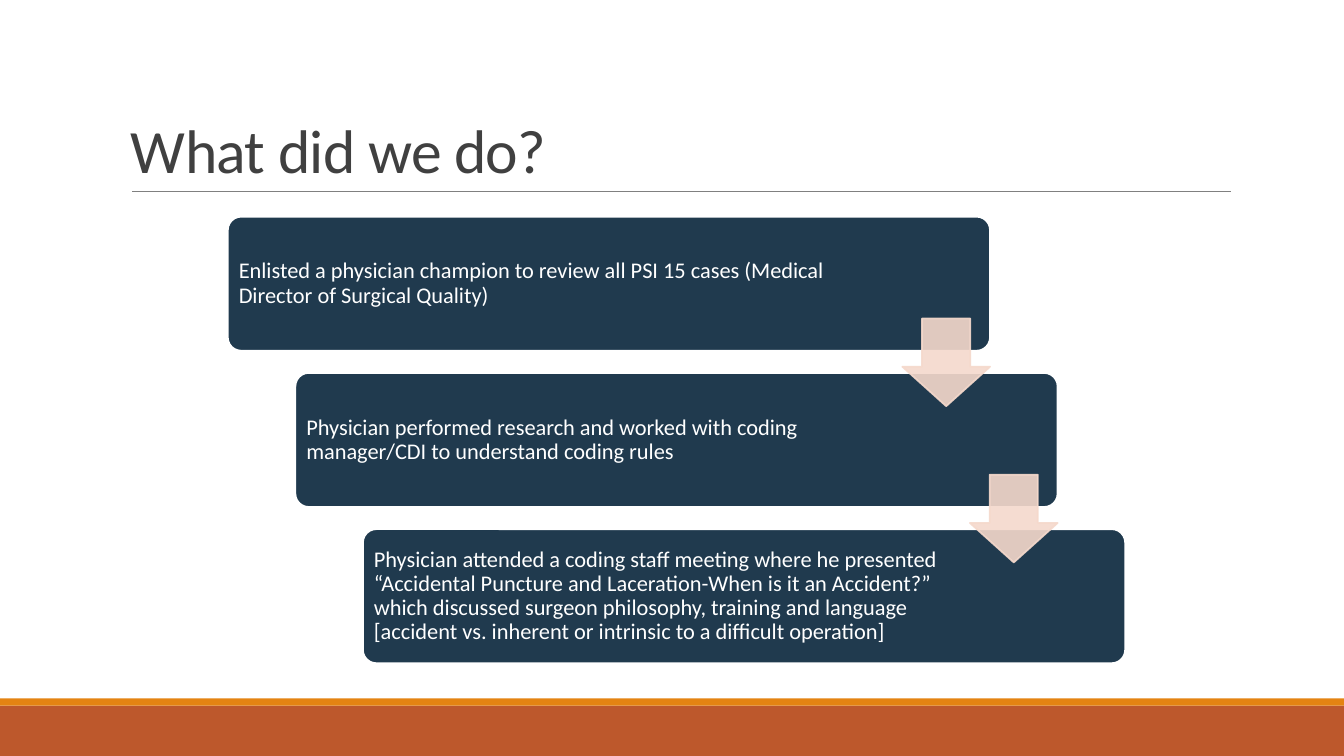
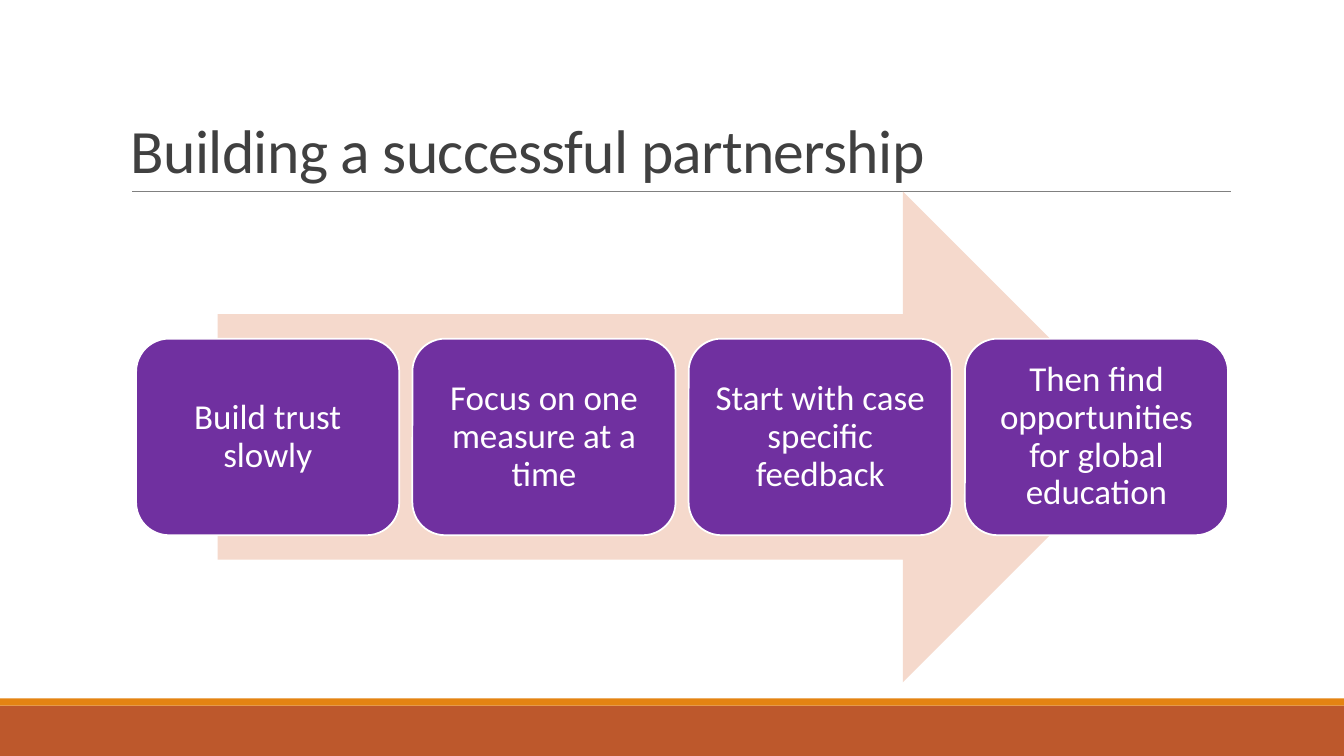
from typing import NamedTuple

from lxml import etree
from pptx import Presentation
from pptx.dml.color import RGBColor
from pptx.enum import shapes, text
from pptx.oxml import ns
from pptx.util import Inches, Pt

COLORS = {
    "footer": "BD582C",
    "stripe": "E48312",
    "rule": "808080",
    "title": "404040",
    "step": "203A4E",
    "stage": "7030A0",
    "arrow": "F5D9CC",
    "white": "FFFFFF",
}
FONT = "Calibri"
SHAPE = shapes.MSO_SHAPE


class Box(NamedTuple):
    left: float
    top: float
    width: float
    height: float

    def lengths(self):
        return [Inches(value) for value in self]


class TextStyle(NamedTuple):
    size: int
    color: str
    line_spacing: float
    align: text.PP_ALIGN = text.PP_ALIGN.LEFT
    anchor: text.MSO_ANCHOR = text.MSO_ANCHOR.MIDDLE


class Step(NamedTuple):
    words: str
    right_margin: float


TITLE_STYLE = TextStyle(44, "title", 0.85, anchor=text.MSO_ANCHOR.BOTTOM)
STEP_STYLE = TextStyle(16, "white", 0.9)
STAGE_STYLE = TextStyle(25, "white", 0.9, align=text.PP_ALIGN.CENTER)

STEPS = [
    Step("Enlisted a physician champion to review all PSI 15 cases "
         "(Medical Director of Surgical Quality)", 1.44),
    Step("Physician performed research and worked with coding "
         "manager/CDI to understand coding rules", 1.61),
    Step("Physician attended a coding staff meeting where he presented "
         "“Accidental Puncture and Laceration-When is it an Accident?” "
         "which discussed surgeon philosophy, training and language "
         "[accident vs. inherent or intrinsic to a difficult operation]", 1.61),
]
STAGES = [
    "Build trust slowly",
    "Focus on one measure at a time",
    "Start with case specific feedback",
    "Then find opportunities for global education",
]


def rgb(name: str) -> RGBColor:
    return RGBColor.from_string(COLORS[name])


def add_block(page, kind, box: Box, fill: str, line: str | None = None,
              adjustments: tuple = ()):
    block = page.shapes.add_shape(kind, *box.lengths())
    block.shadow.inherit = False
    block.fill.solid()
    block.fill.fore_color.rgb = rgb(fill)
    if line:
        block.line.color.rgb = rgb(line)
        block.line.width = Pt(1.25)
    else:
        block.line.fill.background()
    for index, value in enumerate(adjustments):
        block.adjustments[index] = value
    return block


def write(shape, words: str, style: TextStyle, margins: tuple):
    """Fill a shape with one paragraph; margins are left, top, right, bottom."""
    frame = shape.text_frame
    frame.word_wrap = True
    frame.vertical_anchor = style.anchor
    (frame.margin_left, frame.margin_top,
     frame.margin_right, frame.margin_bottom) = map(Inches, margins)
    para = frame.paragraphs[0]
    para.alignment = style.align
    para.line_spacing = style.line_spacing
    para.font.name = FONT
    para.font.size = Pt(style.size)
    para.font.color.rgb = rgb(style.color)
    span = para.add_run()
    span.text = words
    return span


def set_opacity(shape, percent: int) -> None:
    """Apply the opacity to both fill and outline."""
    for color in shape._element.spPr.iter(ns.qn("a:srgbClr")):
        alpha = etree.SubElement(color, ns.qn("a:alpha"))
        alpha.set("val", str(percent * 1000))


def add_page(deck, title: str):
    """Add a page with the shared footer bands, title and rule."""
    page = deck.slides.add_slide(deck.slide_layouts[6])
    add_block(page, SHAPE.RECTANGLE, Box(0, 7, 13.33, 0.5), "footer")
    add_block(page, SHAPE.RECTANGLE, Box(0, 6.93, 13.33, 0.07), "stripe")
    rule = page.shapes.add_connector(
        shapes.MSO_CONNECTOR.STRAIGHT,
        Inches(1.31), Inches(1.9), Inches(12.21), Inches(1.9))
    rule.line.color.rgb = rgb("rule")
    rule.line.width = Pt(0.5)
    etree.SubElement(rule._element.spPr, ns.qn("a:effectLst"))
    heading = page.shapes.add_textbox(*Box(1.2, 0.31, 11, 1.59).lengths())
    span = write(heading, title, TITLE_STYLE, (0.1, 0.05, 0.1, 0.05))
    span.font._element.set("spc", "-50")
    return page


def add_staircase(page) -> None:
    """Draw steps going down to the right, joined by down arrows."""
    width, height, arrow_size = 7.56, 1.33, 0.87
    boxes = [Box(2.26 + 0.67 * i, 2.15 + 1.55 * i, width, height)
             for i in range(len(STEPS))]
    for step, box in zip(STEPS, boxes):
        block = add_block(page, SHAPE.ROUNDED_RECTANGLE, box, "step", "white", (0.1,))
        write(block, step.words, STEP_STYLE, (0.07, 0.07, step.right_margin, 0.07))
    for box in boxes[:-1]:
        place = Box(box.left + width - arrow_size, box.top + 1.01,
                    arrow_size, arrow_size)
        arrow = add_block(page, SHAPE.DOWN_ARROW, place, "arrow", "arrow", (0.55, 0.45))
        set_opacity(arrow, 90)


def add_process(page) -> None:
    """Draw a row of stages on a wide arrow."""
    add_block(page, SHAPE.RIGHT_ARROW, Box(2.16, 1.9, 9.23, 4.87), "arrow")
    width, gap = 2.61, 0.13
    for i, words in enumerate(STAGES):
        box = Box(1.35 + i * (width + gap), 3.36, width, 1.95)
        block = add_block(page, SHAPE.ROUNDED_RECTANGLE, box, "stage", "white")
        write(block, words, STAGE_STYLE, (0.1,) * 4)


def main() -> None:
    deck = Presentation()
    deck.slide_width, deck.slide_height = Inches(13.33), Inches(7.5)
    add_staircase(add_page(deck, "What did we do?"))
    add_process(add_page(deck, "Building a successful partnership"))
    deck.save("out.pptx")


if __name__ == "__main__":
    main()
